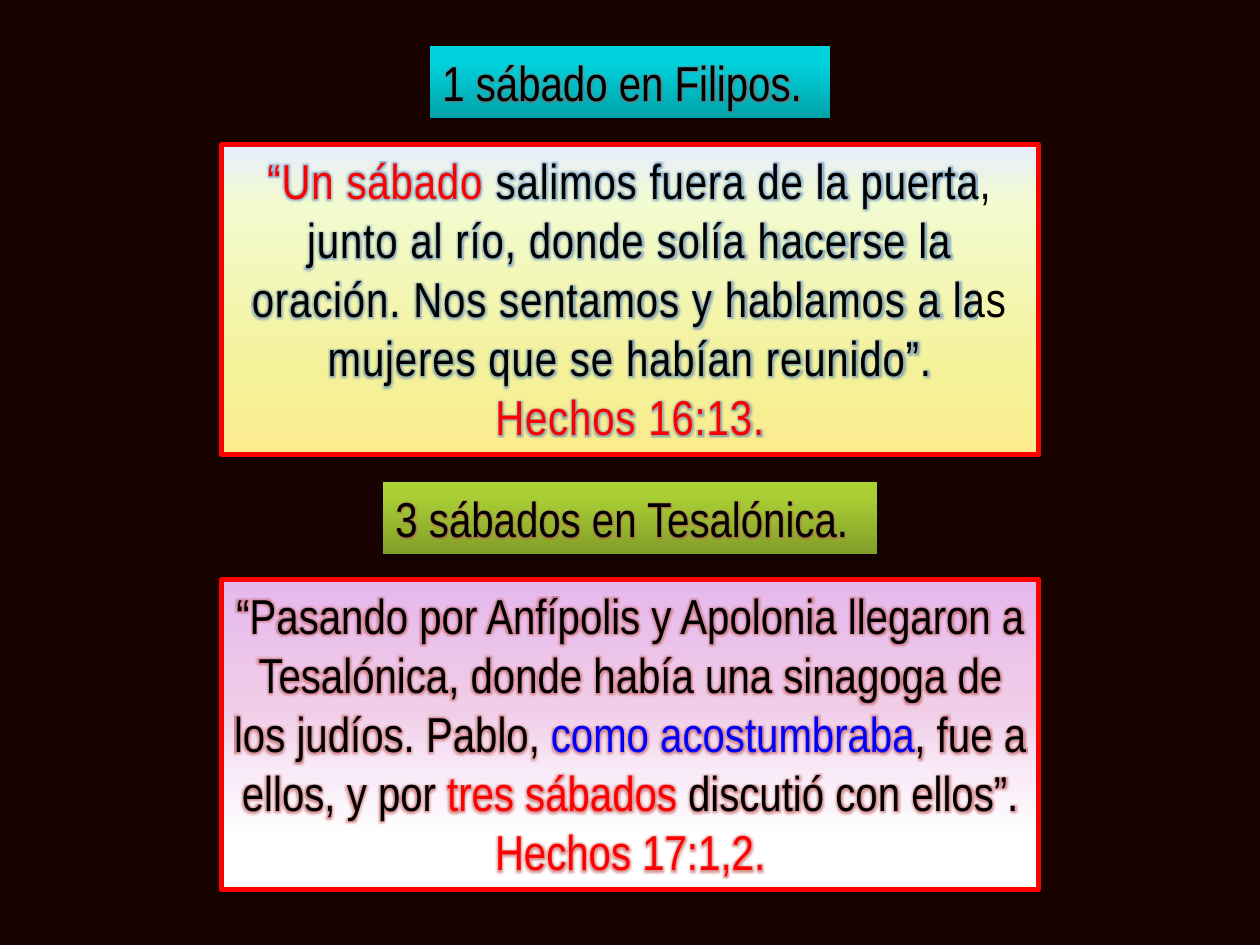
import pptx
import pptx.util
import pptx.dml.color
import pptx.enum.shapes
import pptx.enum.text
import pptx.oxml
import pptx.oxml.ns

Pt = pptx.util.Pt
ALIGN = pptx.enum.text.PP_ALIGN
NS = pptx.oxml.ns.nsdecls("a")
BLACK, RED, BLUE = "000000", "FF0000", "0000FF"
FONT = {"name": "Arial Narrow", "size": Pt(28)}


def color(value):
    return pptx.dml.color.RGBColor.from_string(value)


def gradient(sp, stops):
    items = "".join(
        f'<a:gs pos="{pos * 1000}"><a:srgbClr val="{value}"/></a:gs>'
        for pos, value in stops
    )
    fill = pptx.oxml.parse_xml(
        f'<a:gradFill {NS} rotWithShape="1"><a:gsLst>{items}</a:gsLst>'
        '<a:lin ang="16200000" scaled="0"/></a:gradFill>'
    )
    geometry = sp._element.spPr.find(pptx.oxml.ns.qn("a:prstGeom"))
    geometry.addnext(fill)


def shadow(sp, dist, alpha):
    sp._element.spPr.append(pptx.oxml.parse_xml(
        f'<a:effectLst {NS}><a:outerShdw blurRad="{Pt(3.1)}" dist="{Pt(dist)}" '
        f'dir="5400000" rotWithShape="0"><a:srgbClr val="000000">'
        f'<a:alpha val="{alpha * 1000}"/></a:srgbClr></a:outerShdw></a:effectLst>'
    ))


def add_run(p, text, value, glow, spacing):
    r = p.add_run()
    r.text = text
    for name, setting in FONT.items():
        setattr(r.font, name, setting)
    r.font.color.rgb = color(value)
    rPr = r.font._element
    if spacing:
        rPr.set("spc", str(spacing))
    fill = rPr.find(pptx.oxml.ns.qn("a:solidFill"))
    fill.addnext(pptx.oxml.parse_xml(
        f'<a:effectLst {NS}><a:glow rad="{Pt(3)}"><a:srgbClr val="{glow}">'
        '<a:alpha val="60000"/></a:srgbClr></a:glow></a:effectLst>'
    ))


def add_panel(slide, box, stops, paragraphs, align, glow, spacing=0):
    kind = pptx.enum.shapes.MSO_SHAPE.RECTANGLE
    sp = slide.shapes.add_shape(kind, *map(Pt, box))
    gradient(sp, stops)
    tf = sp.text_frame
    tf.word_wrap = True
    tf.vertical_anchor = pptx.enum.text.MSO_ANCHOR.TOP
    for i, runs in enumerate(paragraphs):
        p = tf.add_paragraph() if i else tf.paragraphs[0]
        p.alignment = align
        for text, value in runs:
            add_run(p, text, value, glow, spacing)
    return sp


def add_label(slide, box, stops, text):
    sp = add_panel(slide, box, stops, [[(text, BLACK)]], ALIGN.LEFT, "C0504D")
    sp.line.fill.background()
    shadow(sp, 1.8, 35)


def add_quote(slide, box, stops, paragraphs, glow, spacing=0):
    sp = add_panel(slide, box, stops, paragraphs, ALIGN.CENTER, glow, spacing)
    sp.line.color.rgb = color(RED)
    sp.line.width = Pt(3)
    shadow(sp, 1.6, 38)


def main():
    prs = pptx.Presentation()
    prs.slide_width, prs.slide_height = Pt(720), Pt(540)
    slide = prs.slides.add_slide(prs.slide_layouts[6])
    bg = slide.background.fill
    bg.solid()
    bg.fore_color.rgb = color("190301")

    add_quote(
        slide, (126.5, 82.7, 467, 177),
        [(0, "FCEC8E"), (26, "F4F199"), (81, "F3FBD0"), (100, "E6EDFF")],
        [
            [
                ("“Un sábado", RED),
                (" salimos fuera de la puerta, junto al río, donde solía hacerse "
                 "la oración. Nos sentamos y hablamos a las mujeres que se habían "
                 "reunido”.", BLACK),
            ],
            [("Hechos 16:13.", RED)],
        ],
        "4F81BD", 50,
    )
    add_quote(
        slide, (126.5, 331.2, 467, 177),
        [(17, "FFFFFF"), (37, "F9EBF8"), (59, "F0CCE7"), (99, "E6B9ED")],
        [[
            ("“Pasando por Anfípolis y Apolonia llegaron a Tesalónica, donde "
             "había una sinagoga de los judíos. Pablo, ", BLACK),
            ("como acostumbraba", BLUE),
            (", fue a ellos, y por ", BLACK),
            ("tres sábados", RED),
            (" discutió con ellos”. ", BLACK),
            ("Hechos 17:1,2.", RED),
        ]],
        "C0504D",
    )
    add_label(
        slide, (245.7, 26.2, 228.5, 41.2),
        [(0, "00A3AA"), (80, "00D3DD"), (100, "00D4DE")],
        "1 sábado en Filipos.",
    )
    add_label(
        slide, (218.9, 275.5, 282.2, 41.2),
        [(0, "829E29"), (80, "A9CE35"), (100, "ABD132")],
        "3 sábados en Tesalónica.",
    )
    prs.save("out.pptx")


if __name__ == "__main__":
    main()
